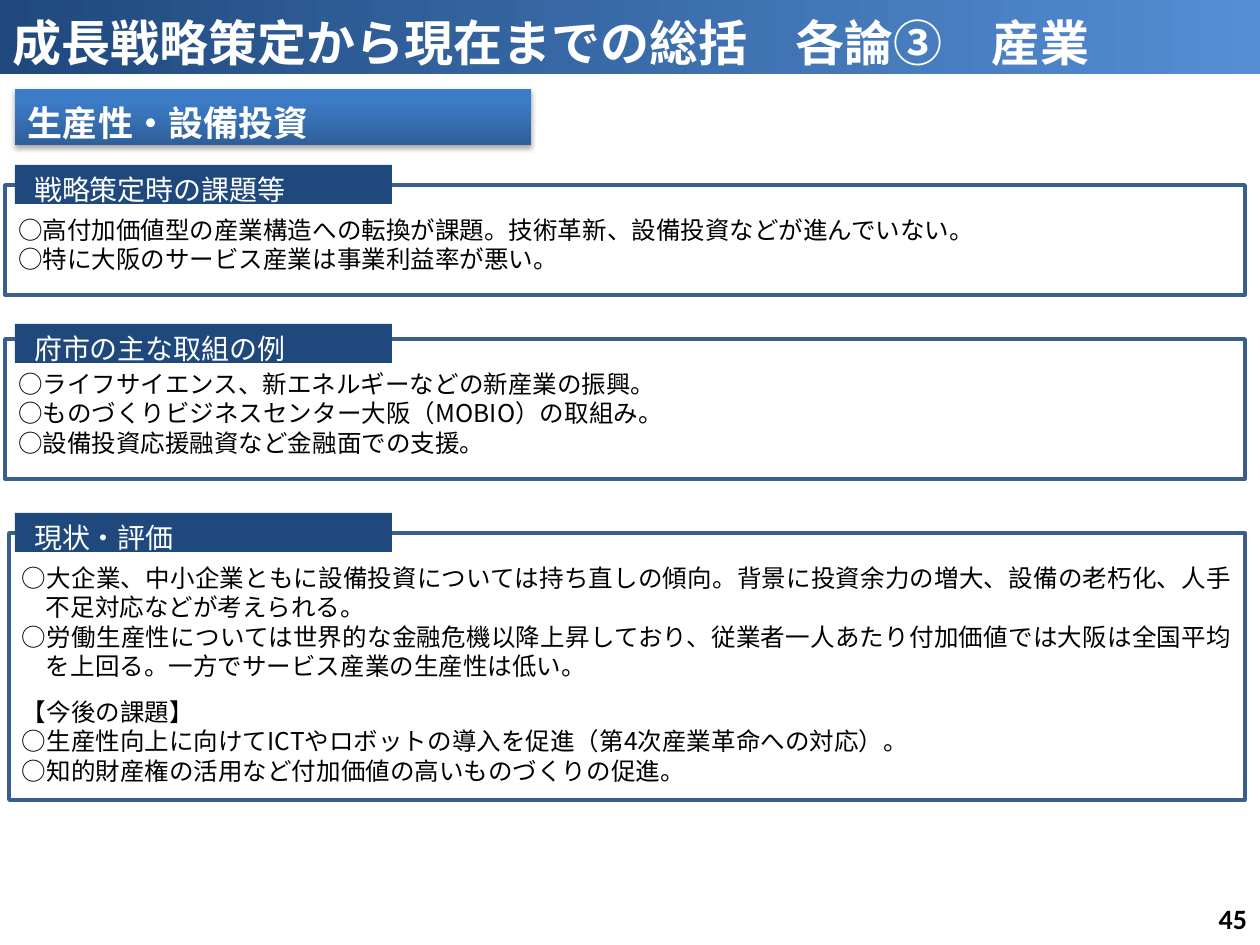
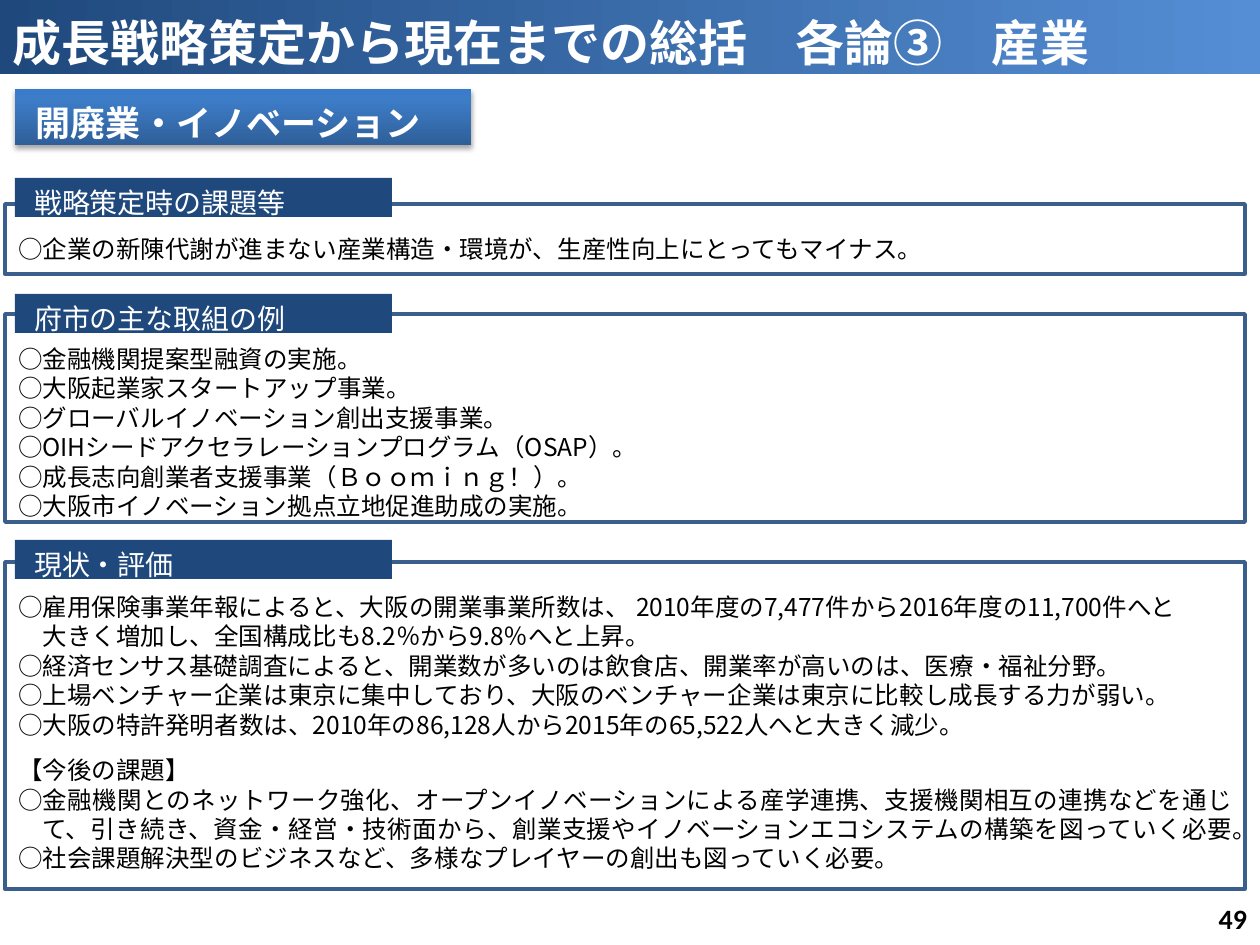
from copy import deepcopy

from lxml.etree import SubElement
from pptx import Presentation
from pptx.dml.color import RGBColor
from pptx.enum.shapes import MSO_SHAPE as Shape
from pptx.enum.text import MSO_ANCHOR as Anchor, MSO_AUTO_SIZE as AutoSize, PP_ALIGN as Align
from pptx.oxml.ns import qn
from pptx.util import Emu, Pt

SCALE = 914400 / 126  # EMU in one px
COMPARISON_LAYOUT = 4

NAVY = RGBColor(0x1F, 0x49, 0x7D)
SKY = RGBColor(0x55, 0x8E, 0xD5)
FRAME_BLUE = RGBColor(0x3A, 0x5F, 0x8C)
TOPIC_DARK = RGBColor(0x2F, 0x5F, 0x99)
TOPIC_MID = RGBColor(0x3D, 0x7C, 0xC7)
TOPIC_LIGHT = RGBColor(0x3A, 0x7C, 0xCB)
WHITE = RGBColor(0xFF, 0xFF, 0xFF)
BLACK = RGBColor(0x00, 0x00, 0x00)

JAPANESE_FONT = "Noto Sans CJK JP"
NUMBER_FONT = "Calibri"

TITLE = "成長戦略策定から現在までの総括　各論③　産業"
HEADINGS = [" 戦略策定時の課題等", " 府市の主な取組の例", " 現状・評価"]
FUTURE_ISSUES = "【今後の課題】"
HEADING_INSETS = (13, 10, 13, 0)
HANG = 24

# Each section: top of its heading, frame (left, top, width, height), paragraphs
PAGES = [
    {
        "topic": "生産性・設備投資", "topic_width": 516, "number": "45",
        "sections": [
            (165, (5, 185, 1240, 110), [
                "○高付加価値型の産業構造への転換が課題。技術革新、設備投資などが進んでいない。",
                "○特に大阪のサービス産業は事業利益率が悪い。",
            ]),
            (324, (5, 339, 1240, 140), [
                "○ライフサイエンス、新エネルギーなどの新産業の振興。",
                "○ものづくりビジネスセンター大阪（MOBIO）の取組み。",
                "○設備投資応援融資など金融面での支援。",
            ]),
            (513, (9, 533, 1236, 267), [
                "○大企業、中小企業ともに設備投資については持ち直しの傾向。"
                "背景に投資余力の増大、設備の老朽化、人手不足対応などが考えられる。",
                "○労働生産性については世界的な金融危機以降上昇しており、従業者一人あたり"
                "付加価値では大阪は全国平均を上回る。一方でサービス産業の生産性は低い。",
                FUTURE_ISSUES,
                "○生産性向上に向けてICTやロボットの導入を促進（第4次産業革命への対応）。",
                "○知的財産権の活用など付加価値の高いものづくりの促進。",
            ]),
        ],
    },
    {
        "topic": " 開廃業・イノベーション", "topic_width": 456, "number": "49",
        "sections": [
            (178, (5, 204, 1240, 70), [
                "○企業の新陳代謝が進まない産業構造・環境が、生産性向上にとってもマイナス。",
            ]),
            (294, (5, 314, 1240, 208), [
                "○金融機関提案型融資の実施。",
                "○大阪起業家スタートアップ事業。",
                "○グローバルイノベーション創出支援事業。",
                "○OIHシードアクセラレーションプログラム（OSAP）。",
                "○成長志向創業者支援事業（Ｂｏｏｍｉｎｇ！）。",
                "○大阪市イノベーション拠点立地促進助成の実施。",
            ]),
            (540, (5, 562, 1240, 327), [
                "○雇用保険事業年報によると、大阪の開業事業所数は、 "
                "2010年度の7,477件から2016年度の11,700件へと",
                "　大きく増加し、全国構成比も8.2％から9.8％へと上昇。",
                "○経済センサス基礎調査によると、開業数が多いのは飲食店、"
                "開業率が高いのは、医療・福祉分野。",
                "○上場ベンチャー企業は東京に集中しており、"
                "大阪のベンチャー企業は東京に比較し成長する力が弱い。",
                "○大阪の特許発明者数は、2010年の86,128人から2015年の65,522人へと大きく減少。",
                FUTURE_ISSUES,
                "○金融機関とのネットワーク強化、オープンイノベーションによる産学連携、"
                "支援機関相互の連携などを通じて、引き続き、資金・経営・技術面から、"
                "創業支援やイノベーションエコシステムの構築を図っていく必要。",
                "○社会課題解決型のビジネスなど、多様なプレイヤーの創出も図っていく必要。",
            ]),
        ],
    },
]


def px(length):
    return Emu(round(length * SCALE))


def place(box, left, top, width, height):
    box.left, box.top, box.width, box.height = map(px, (left, top, width, height))


def set_frame(box, anchor, insets=(13, 6, 13, 6)):
    frame = box.text_frame
    frame.word_wrap = True
    frame.auto_size = AutoSize.NONE
    frame.vertical_anchor = anchor
    (frame.margin_left, frame.margin_top,
     frame.margin_right, frame.margin_bottom) = map(px, insets)
    return frame


def add_span(para, text, size, color, bold=False, font=JAPANESE_FONT):
    span = para.add_run()
    span.text = text
    span.font.name = font
    span.font.size = Pt(size)
    span.font.bold = bold
    span.font.color.rgb = color
    SubElement(span.font._element, qn("a:ea"), typeface=font)


def write_line(box, text, size, color, insets, bold=False, align=Align.LEFT, font=JAPANESE_FONT):
    """Fill a box with one vertically centred line."""
    para = set_frame(box, Anchor.MIDDLE, insets).paragraphs[0]
    para.alignment = align
    add_span(para, text, size, color, bold, font)


def fill_gradient(box, angle, stops):
    """Stops are (position, color); the angle runs counter-clockwise."""
    box.fill.gradient()
    box.fill.gradient_angle = angle
    stop_list = box._element.spPr.find(".//" + qn("a:gsLst"))
    while len(stop_list) < len(stops):
        stop_list.append(deepcopy(stop_list[-1]))
    for stop, (position, color) in zip(box.fill.gradient_stops, stops):
        stop.position = position
        stop.color.rgb = color


def add_soft_shadow(box):
    effects = box._element.spPr.find(qn("a:effectLst"))
    shadow = SubElement(effects, qn("a:outerShdw"), blurRad=str(Pt(3.1)),
                        dist=str(Pt(1.8)), dir="5400000", rotWithShape="0")
    color = SubElement(shadow, qn("a:srgbClr"), val=str(BLACK))
    SubElement(color, qn("a:alpha"), val="35000")


def add_rectangle(page, left, top, width, height):
    box = page.shapes.add_shape(Shape.RECTANGLE, *map(px, (left, top, width, height)))
    box.shadow.inherit = False
    box.line.fill.background()
    return box


def write_title(page):
    title = page.shapes.title
    place(title, 0, 0, 1260, 74)
    fill_gradient(title, 0, [(0, NAVY), (1, SKY)])
    write_line(title, TITLE, 28, WHITE, (13, 15, 13, 6), bold=True)


def add_topic(page, text, width):
    topic = add_rectangle(page, 15, 89, width, 56)
    fill_gradient(topic, 90, [(0, TOPIC_DARK), (0.8, TOPIC_MID), (1, TOPIC_LIGHT)])
    add_soft_shadow(topic)
    write_line(topic, text, 20, WHITE, HEADING_INSETS, bold=True)


def add_heading(page, text, top):
    heading = add_rectangle(page, 15, top, 377, 39)
    heading.fill.solid()
    heading.fill.fore_color.rgb = NAVY
    write_line(heading, text, 16, WHITE, HEADING_INSETS)


def write_list(body, bounds, texts):
    place(body, *bounds)
    body.line.color.rgb = FRAME_BLUE
    body.line.width = Pt(2)
    frame = set_frame(body, Anchor.TOP, (13, 30, 13, 6))
    for index, text in enumerate(texts):
        para = frame.add_paragraph() if index else frame.paragraphs[0]
        properties = para._p.get_or_add_pPr()
        properties.set("marL", str(px(HANG)))
        properties.set("indent", str(px(-HANG)))
        SubElement(properties, qn("a:buNone"))
        para.alignment = Align.JUSTIFY
        para.space_before = Pt(0)
        para.line_spacing = Pt(26) if text == FUTURE_ISSUES else 1.0
        add_span(para, text, 14, BLACK)


def add_page_number(page, number):
    box = page.shapes.add_textbox(*map(px, (966, 893, 294, 50)))
    write_line(box, number, 16, BLACK, (13, 6, 13, 6), True, Align.RIGHT, NUMBER_FONT)


def add_page(deck, content):
    page = deck.slides.add_slide(deck.slide_layouts[COMPARISON_LAYOUT])
    write_title(page)
    *bodies, spare = list(page.placeholders)[1:]
    spare._element.getparent().remove(spare._element)
    for body, heading, (top, bounds, texts) in zip(bodies, HEADINGS, content["sections"]):
        write_list(body, bounds, texts)
        add_heading(page, heading, top)
    add_topic(page, content["topic"], content["topic_width"])
    add_page_number(page, content["number"])


def main():
    deck = Presentation()
    deck.slide_width, deck.slide_height = px(1260), px(945)
    for content in PAGES:
        add_page(deck, content)
    deck.save("out.pptx")


if __name__ == "__main__":
    main()
